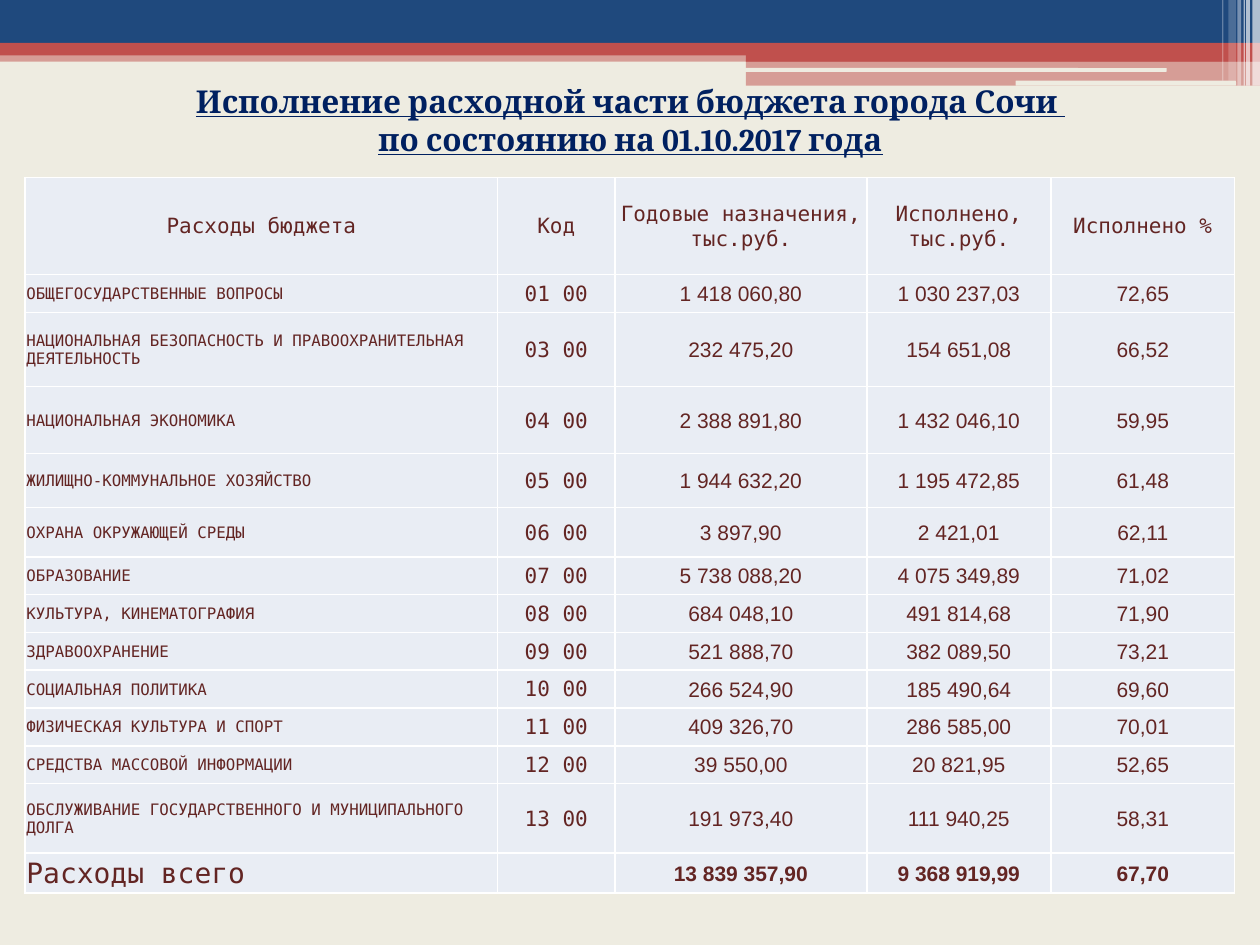
from lxml import etree
from pptx import Presentation
from pptx.dml.color import RGBColor
from pptx.enum.shapes import MSO_SHAPE
from pptx.enum.text import MSO_ANCHOR, MSO_AUTO_SIZE, PP_ALIGN
from pptx.oxml.ns import qn
from pptx.util import Inches, Pt

RECT, ROUNDED = MSO_SHAPE.RECTANGLE, MSO_SHAPE.ROUNDED_RECTANGLE
CENTER, LEFT = PP_ALIGN.CENTER, PP_ALIGN.LEFT
TOP, MIDDLE = MSO_ANCHOR.TOP, MSO_ANCHOR.MIDDLE
NO_AUTOFIT = MSO_AUTO_SIZE.NONE

CREAM = RGBColor(0xEE, 0xEC, 0xE1)
BLUE = RGBColor(0x1F, 0x49, 0x7D)
RED = RGBColor(0xC0, 0x50, 0x4D)
WHITE = RGBColor(0xFF, 0xFF, 0xFF)
NAVY = RGBColor(0x00, 0x20, 0x60)
MAROON = RGBColor(0x63, 0x25, 0x23)
CELL_FILL = RGBColor(0xE9, 0xED, 0xF4)

MONO, SANS, SERIF = "DejaVu Sans Mono", "Arial", "Cambria"

TITLE = ["Исполнение расходной части бюджета города Сочи ",
         "по состоянию на 01.10.2017 года"]

# left, top, width, height, shape, colour, opacity in percent
BANDS = [
    (0, 0.4, 10, 0.09, RECT, RED, 50),
    (0, 0, 10, 0.34, RECT, BLUE, 100),
    (0, 0.34, 10, 0.1, RECT, RED, 100),
    (5.92, 0.39, 4.08, 0.1, RECT, RED, 100),
    (5.92, 0.48, 4.08, 0.2, RECT, RED, 50),
    (5.91, 0.54, 3.35, 0.03, ROUNDED, CREAM, 100),
    (8.06, 0.64, 1.75, 0.04, ROUNDED, CREAM, 100),
]
# left, width, height, opacity in percent
STRIPES = [
    (9.94, 0.06, 0.68, 65),
    (9.89, 0.03, 0.68, 65),
    (9.87, 0.01, 0.68, 60),
    (9.82, 0.03, 0.68, 40),
    (9.75, 0.06, 0.64, 20),
    (9.7, 0.01, 0.64, 30),
]

COLUMN_WIDTHS = [3.75, 0.93, 2, 1.46, 1.46]
HEADER = ("Расходы бюджета", "Код", "Годовые назначения, тыс.руб.",
          "Исполнено, тыс.руб.", "Исполнено %")
HEADER_HEIGHT = 0.77
# row height, then the cells
EXPENSES = [
    (0.3, "ОБЩЕГОСУДАРСТВЕННЫЕ ВОПРОСЫ", "01 00", "1 418 060,80", "1 030 237,03", "72,65"),
    (0.59, "НАЦИОНАЛЬНАЯ БЕЗОПАСНОСТЬ И ПРАВООХРАНИТЕЛЬНАЯ ДЕЯТЕЛЬНОСТЬ",
     "03 00", "232 475,20", "154 651,08", "66,52"),
    (0.53, "НАЦИОНАЛЬНАЯ ЭКОНОМИКА", "04 00", "2 388 891,80", "1 432 046,10", "59,95"),
    (0.43, "ЖИЛИЩНО-КОММУНАЛЬНОЕ ХОЗЯЙСТВО", "05 00", "1 944 632,20", "1 195 472,85", "61,48"),
    (0.39, "ОХРАНА ОКРУЖАЮЩЕЙ СРЕДЫ", "06 00", "3 897,90", "2 421,01", "62,11"),
    (0.3, "ОБРАЗОВАНИЕ", "07 00", "5 738 088,20", "4 075 349,89", "71,02"),
    (0.3, "КУЛЬТУРА, КИНЕМАТОГРАФИЯ", "08 00", "684 048,10", "491 814,68", "71,90"),
    (0.3, "ЗДРАВООХРАНЕНИЕ", "09 00", "521 888,70", "382 089,50", "73,21"),
    (0.3, "СОЦИАЛЬНАЯ ПОЛИТИКА", "10 00", "266 524,90", "185 490,64", "69,60"),
    (0.3, "ФИЗИЧЕСКАЯ КУЛЬТУРА И СПОРТ", "11 00", "409 326,70", "286 585,00", "70,01"),
    (0.3, "СРЕДСТВА МАССОВОЙ ИНФОРМАЦИИ", "12 00", "39 550,00", "20 821,95", "52,65"),
    (0.55, "ОБСЛУЖИВАНИЕ ГОСУДАРСТВЕННОГО И МУНИЦИПАЛЬНОГО ДОЛГА",
     "13 00", "191 973,40", "111 940,25", "58,31"),
]
TOTAL = ("Расходы всего", "", "13 839 357,90", "9 368 919,99", "67,70")
TOTAL_HEIGHT = 0.32


def add_band(page, left, top, width, height, kind, colour, opacity):
    band = page.shapes.add_shape(kind, Inches(left), Inches(top), Inches(width), Inches(height))
    band.shadow.inherit = False
    band.line.fill.background()
    band.fill.solid()
    band.fill.fore_color.rgb = colour
    if opacity < 100:
        colour_node = band.fill._xPr.find(qn("a:solidFill"))[0]
        etree.SubElement(colour_node, qn("a:alpha"), val=str(opacity * 1000))


def add_span(para, text, font, size, colour, bold=False, underline=False):
    span = para.add_run()
    span.text = text
    span.font.name = font
    span.font.size = Pt(size)
    span.font.color.rgb = colour
    span.font.bold = bold
    span.font.underline = underline


def add_borders(cell):
    """Draw white 1 pt lines on all sides; they must precede the cell fill."""
    properties = cell._tc.get_or_add_tcPr()
    for index, side in enumerate(("a:lnL", "a:lnR", "a:lnT", "a:lnB")):
        line = etree.Element(qn(side), w=str(Pt(1)))
        fill = etree.SubElement(line, qn("a:solidFill"))
        etree.SubElement(fill, qn("a:srgbClr"), val=str(WHITE))
        properties.insert(index, line)


def fill_cell(cell, text, font, size, align, bold):
    cell.margin_left = cell.margin_top = cell.margin_right = Inches(0.01)
    cell.margin_bottom = 0
    cell.vertical_anchor = MIDDLE
    cell.fill.solid()
    cell.fill.fore_color.rgb = CELL_FILL
    add_borders(cell)
    if text:
        para = cell.text_frame.paragraphs[0]
        para.alignment = align
        add_span(para, text, font, size, MAROON, bold)


def add_budget_table(page):
    rows = [HEADER] + [row[1:] for row in EXPENSES] + [TOTAL]
    heights = [HEADER_HEIGHT] + [row[0] for row in EXPENSES] + [TOTAL_HEIGHT]
    last = len(rows) - 1
    table = page.shapes.add_table(len(rows), len(HEADER), Inches(0.2), Inches(1.41),
                                  Inches(sum(COLUMN_WIDTHS)), Inches(sum(heights))).table
    for column, width in zip(table.columns, COLUMN_WIDTHS):
        column.width = Inches(width)
    for r, (texts, height) in enumerate(zip(rows, heights)):
        table.rows[r].height = Inches(height)
        for c, text in enumerate(texts):
            is_name = r > 0 and c == 0
            is_figure = r > 0 and c > 1
            size = (16 if r == last else 9) if is_name else 12
            fill_cell(table.cell(r, c), text, SANS if is_figure else MONO, size,
                      LEFT if is_name else CENTER, is_figure and r == last)


def format_title(page):
    title = page.shapes.title
    title.left, title.top = Inches(0.2), Inches(0.6)
    title.width, title.height = Inches(9.61), Inches(0.71)
    frame = title.text_frame
    frame.word_wrap = True
    frame.auto_size = NO_AUTOFIT
    frame.vertical_anchor = TOP
    for index, text in enumerate(TITLE):
        para = frame.add_paragraph() if index else frame.paragraphs[0]
        para.alignment = CENTER
        para.space_before = Pt(0)
        add_span(para, text, SERIF, 18, NAVY, bold=True, underline=True)
    # Bring the title in front of the bands.
    title.element.getparent().append(title.element)


def main():
    deck = Presentation()
    deck.slide_width, deck.slide_height = Inches(10), Inches(7.5)
    page = deck.slides.add_slide(deck.slide_layouts[5])
    page.background.fill.solid()
    page.background.fill.fore_color.rgb = CREAM
    for band in BANDS:
        add_band(page, *band)
    for left, width, height, opacity in STRIPES:
        add_band(page, left, 0, width, height, RECT, WHITE, opacity)
    add_budget_table(page)
    format_title(page)
    deck.save("out.pptx")


if __name__ == "__main__":
    main()
